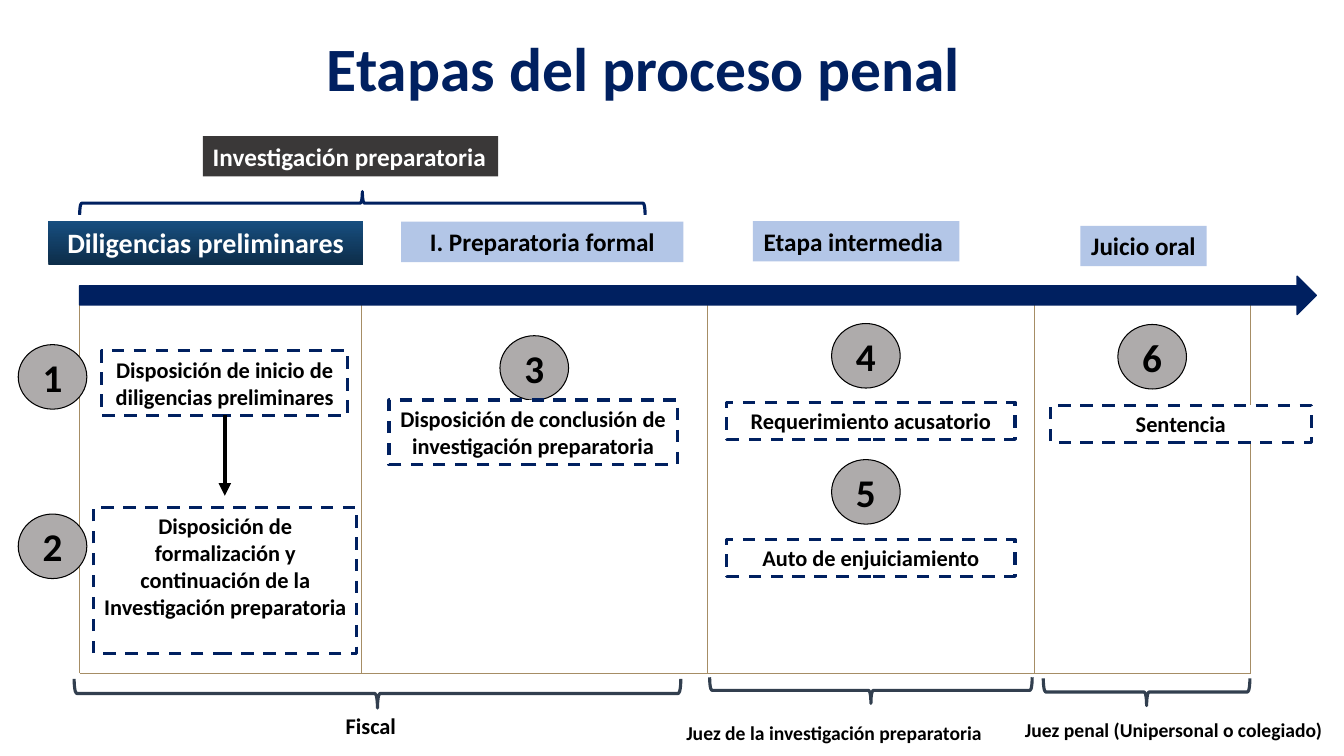
from lxml.etree import SubElement
from pptx import Presentation
from pptx.dml.color import RGBColor
from pptx.enum.dml import MSO_LINE_DASH_STYLE as Dash
from pptx.enum.shapes import MSO_CONNECTOR as Connector, MSO_SHAPE as Shape
from pptx.enum.text import MSO_ANCHOR as Anchor, MSO_AUTO_SIZE as AutoSize, PP_ALIGN as Align
from pptx.oxml.ns import qn
from pptx.util import Pt

NAVY, BLACK, WHITE = "002060", "000000", "FFFFFF"
SLATE, TAN, GREY, SKY, CHARCOAL = "323F4F", "A68D65", "AEABAB", "B3C6E7", "3A3838"


def colour(hex_value):
    return RGBColor.from_string(hex_value)


class ProcessSlide:
    """Holds the style and the current slide and draws each kind of element."""

    font = {"name": "Calibri", "bold": True}
    frame = {"word_wrap": True, "auto_size": AutoSize.NONE,
             "margin_left": Pt(7.2), "margin_right": Pt(7.2),
             "margin_top": Pt(3.6), "margin_bottom": Pt(3.6)}

    def __init__(self, deck):
        self.slide = deck.slides.add_slide(deck.slide_layouts[5])
        self.shapes = self.slide.shapes

    def letter(self, holder, text, size, ink=BLACK, align=Align.CENTER, anchor=Anchor.TOP):
        frame = holder.text_frame
        for key, value in {**self.frame, "vertical_anchor": anchor}.items():
            setattr(frame, key, value)
        paragraph = frame.paragraphs[0]
        paragraph.alignment = align
        run = paragraph.add_run()
        run.text = text
        for key, value in {**self.font, "size": Pt(size)}.items():
            setattr(run.font, key, value)
        run.font.color.rgb = colour(ink)

    def paint(self, holder, fill=None, line=None, weight=1.0, dash=None):
        if fill:
            holder.fill.solid()
            holder.fill.fore_color.rgb = colour(fill)
        else:
            holder.fill.background()
        if line:
            holder.line.color.rgb = colour(line)
            holder.line.width = Pt(weight)
            holder.line.dash_style = dash
        else:
            holder.line.fill.background()

    def title(self, text, left, top, width, height):
        heading = self.shapes.title
        for key, value in {"left": left, "top": top, "width": width, "height": height}.items():
            setattr(heading, key, Pt(value))
        self.paint(heading, WHITE, WHITE, 2.25)
        self.letter(heading, text, 44, NAVY, anchor=Anchor.MIDDLE)

    def shape(self, kind, left, top, width, height, **look):
        figure = self.shapes.add_shape(kind, Pt(left), Pt(top), Pt(width), Pt(height))
        figure.shadow.inherit = False
        self.paint(figure, **look)
        return figure

    def stage(self, text, left, top, width, height=28.8, fill=SKY, ink=BLACK, size=18,
              align=Align.CENTER):
        banner = self.shape(Shape.RECTANGLE, left, top, width, height, fill=fill)
        self.letter(banner, text, size, ink, align)
        return banner

    def act(self, text, left, top, width, height, fill=WHITE):
        box = self.shape(Shape.RECTANGLE, left, top, width, height,
                         fill=fill, line=NAVY, weight=2.25, dash=Dash.DASH)
        self.letter(box, text, 16)

    def number(self, value, left, top):
        badge = self.shape(Shape.OVAL, left, top, 49, 46.1, fill=GREY, line=BLACK, weight=0.75)
        self.letter(badge, str(value), 28, anchor=Anchor.MIDDLE)

    def brace(self, left, top, span, depth, rotation=90, line=SLATE):
        bracket = self.shape(Shape.RIGHT_BRACE, left + (span - depth) / 2,
                             top + (depth - span) / 2, depth, span, line=line, weight=2.25)
        bracket.rotation = rotation

    def line(self, x1, y1, x2, y2, ink=TAN, weight=0.75, arrow=False):
        stroke = self.shapes.add_connector(Connector.STRAIGHT, Pt(x1), Pt(y1), Pt(x2), Pt(y2))
        stroke.line.color.rgb = colour(ink)
        stroke.line.width = Pt(weight)
        properties = stroke.element.spPr
        if arrow:
            SubElement(properties.find(qn("a:ln")), qn("a:tailEnd"), type="triangle")
        SubElement(properties, qn("a:effectLst"))

    def caption(self, text, left, top, width, height, size):
        note = self.shapes.add_textbox(Pt(left), Pt(top), Pt(width), Pt(height))
        self.letter(note, text, size, align=Align.LEFT)


def main():
    deck = Presentation()
    deck.slide_width, deck.slide_height = Pt(960), Pt(540)
    process = ProcessSlide(deck)
    process.title("Etapas del proceso penal ", 205.2, 22.3, 519.8, 51.1)

    columns = [56.9, 258.5, 505.4, 738.7, 893.5]
    for x in columns:
        process.line(x, 211, x, 481)
    process.line(columns[0], 481, columns[-1], 481)
    process.shape(Shape.RIGHT_ARROW, 56.9, 197.3, 883.4, 27.4, fill=NAVY, line=NAVY)

    process.stage("Investigación preparatoria", 144.9, 97.2, 211,
                  fill=CHARCOAL, ink=WHITE, align=Align.LEFT)
    process.brace(56.9, 136.8, 403.9, 16.6, 270, NAVY)
    preliminary = process.stage("Diligencias preliminares", 34.6, 157.9, 224.6, 31.7,
                                ink=WHITE, size=20)
    preliminary.fill.gradient()
    preliminary.fill.gradient_angle = 90
    for stop, shade in zip(preliminary.fill.gradient_stops, ("0D2D49", "174E7F")):
        stop.color.rgb = colour(shade)
    process.stage("I. Preparatoria formal", 286.6, 158.4, 201.6)
    process.stage("Etapa intermedia ", 537.8, 157.9, 147.6)
    process.stage("Juicio oral", 771.7, 161.3, 90.2)

    badges = [(13, 246.2), (13, 367.2), (357.1, 239.8), (594, 231.1), (594, 328.3), (798.5, 231.8)]
    for value, (left, top) in enumerate(badges, 1):
        process.number(value, left, top)

    process.act("Disposición de inicio de diligencias preliminares", 72.7, 250.6, 175.7, 46.1, None)
    process.act("Disposición de formalización y continuación de la Investigación preparatoria",
                67, 362.2, 187.9, 104.4)
    process.act("Disposición de conclusión de investigación preparatoria",
                277.9, 285.8, 205.9, 46.1)
    process.act("Requerimiento acusatorio", 519.1, 287.3, 205.9, 26.6)
    process.act("Auto de enjuiciamiento", 519.1, 385.2, 205.9, 26.6)
    process.act("Sentencia", 750.2, 289.4, 186.5, 26.6)
    process.line(160.6, 296.6, 160.6, 354.2, BLACK, 3, arrow=True)

    process.brace(52.9, 484.9, 433.4, 20.9)
    process.brace(506.9, 483.8, 230.4, 18.7)
    process.brace(745.2, 484.6, 147.6, 19.4)
    process.caption("Fiscal", 239.8, 505.4, 51.1, 26.6, 16)
    process.caption("Juez de la investigación preparatoria", 483.1, 511.2, 226.8, 24.5, 14)
    process.caption("Juez penal (Unipersonal o colegiado)", 725, 509, 229, 24.5, 14)

    deck.save("out.pptx")


if __name__ == "__main__":
    main()
